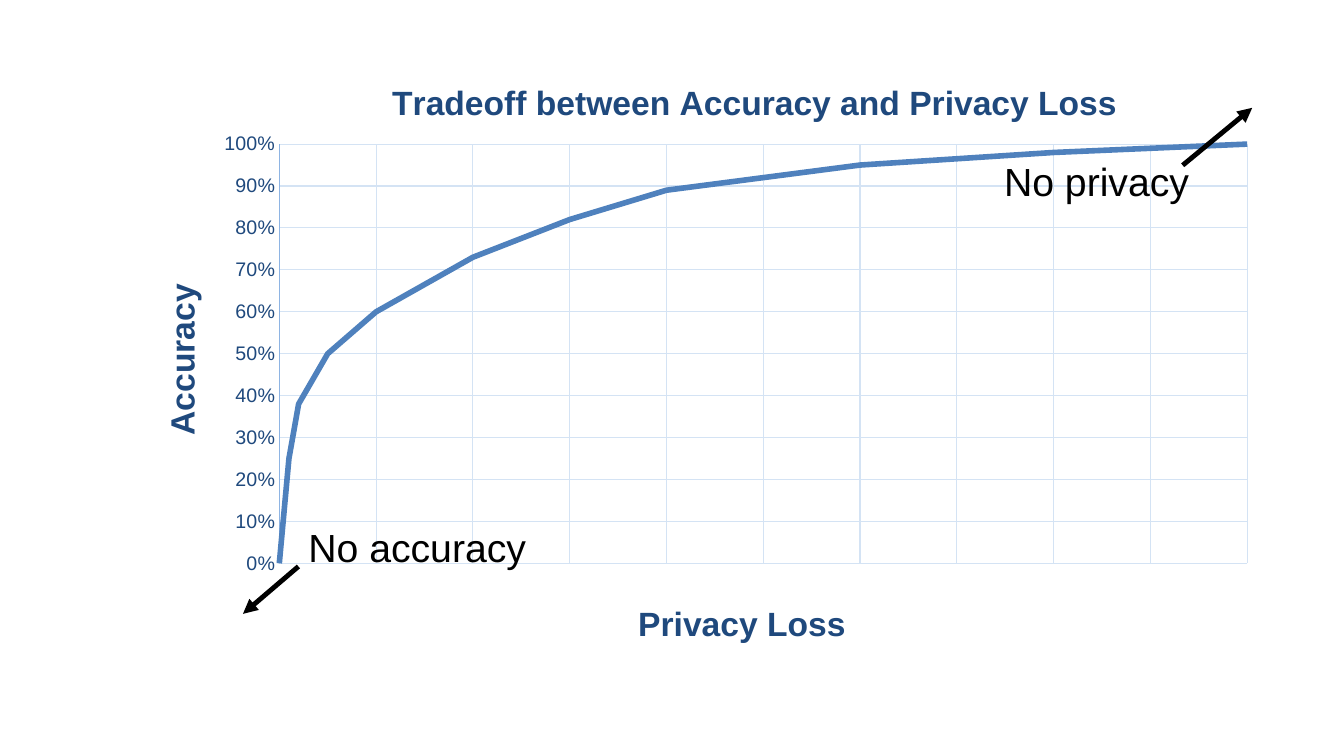
from pptx import Presentation
from pptx.chart.data import XyChartData
from pptx.dml.color import RGBColor
from pptx.enum.chart import XL_CHART_TYPE as ChartType, XL_TICK_MARK as Tick
from pptx.enum.shapes import MSO_CONNECTOR as Connector
from pptx.oxml import parse_xml
from pptx.oxml.ns import nsdecls, qn
from pptx.util import Inches, Pt

THEME = {
    "font": "Arial", "navy": "1F497D", "curve": "4F81BD", "grid": "D4E3F4",
    "axis": "8EB4E3", "ink": "000000",
    "title": 24, "tick": 14, "label": 28,
    "curve_width": 4, "grid_width": 0.75, "arrow_width": 3.5,
}

TITLE = ("Tradeoff between Accuracy and Privacy Loss", (3.83, 0.74))
X_TITLE = ("Privacy Loss", (6.27, 5.91))
Y_TITLE = ("Accuracy", (1.53, 2.76))
POINTS = [(0, 0), (0.1, 0.25), (0.2, 0.38), (0.5, 0.5), (1, 0.6), (2, 0.73),
          (3, 0.82), (4, 0.89), (6, 0.95), (8, 0.98), (10, 1)]
CHART_BOX = (1.25, 0.45, 11.36, 6.12)
PLOT_BOX = (2.77, 1.43, 9.6, 4.16)
LABELS = [("No privacy", (9.86, 1.51, 2.38, 0.57)),
          ("No accuracy", (2.96, 5.14, 2.38, 0.57))]
ARROWS = [(2.96, 5.62, 2.41, 6.09), (11.73, 1.64, 12.42, 1.07)]


def style_font(font, size, color, bold=False):
    font.name = THEME["font"]
    font.size = Pt(size)
    font.bold = bold
    font.color.rgb = RGBColor.from_string(color)


def style_line(line, color, width):
    line.color.rgb = RGBColor.from_string(color)
    line.width = Pt(width)


def make_layout(box, inner=False):
    left, top, width, height = CHART_BOX
    parts = [("x", (box[0] - left) / width), ("y", (box[1] - top) / height)]
    modes = '<c:xMode val="edge"/><c:yMode val="edge"/>'
    if inner:
        parts += [("w", box[2] / width), ("h", box[3] / height)]
        modes = '<c:layoutTarget val="inner"/>' + modes
    values = "".join(f'<c:{name} val="{value:.4f}"/>' for name, value in parts)
    return parse_xml(f'<c:layout {nsdecls("c")}><c:manualLayout>{modes}{values}'
                     '</c:manualLayout></c:layout>')


def drop_layout(parent):
    for old in parent.findall(qn("c:layout")):
        parent.remove(old)


def set_title(title, content):
    text, place = content
    tf = title.text_frame
    tf.text = text
    style_font(tf.paragraphs[0].runs[0].font, THEME["title"], THEME["navy"], True)
    element = title._element
    drop_layout(element)
    element.find(qn("c:tx")).addnext(make_layout(place))
    return tf


def set_axis(axis, maximum, unit):
    axis.minimum_scale, axis.maximum_scale, axis.major_unit = 0, maximum, unit
    axis.has_major_gridlines = True
    style_line(axis.major_gridlines.format.line, THEME["grid"], THEME["grid_width"])
    axis.major_tick_mark = axis.minor_tick_mark = Tick.NONE


def add_tradeoff_chart(slide):
    data = XyChartData()
    points = data.add_series("Series 1")
    for x, y in POINTS:
        points.add_data_point(x, y)
    chart = slide.shapes.add_chart(ChartType.XY_SCATTER_SMOOTH_NO_MARKERS,
                                   *map(Inches, CHART_BOX), data).chart
    chart.has_legend = False
    style_font(chart.font, THEME["tick"], THEME["navy"])
    chart.plots[0].vary_by_categories = False
    series = chart.plots[0].series[0]
    series.smooth = True
    style_line(series.format.line, THEME["curve"], THEME["curve_width"])

    x_axis, y_axis = chart.category_axis, chart.value_axis
    set_axis(x_axis, 10, 1)
    set_axis(y_axis, 1, 0.1)
    x_axis.visible = False
    labels = y_axis.tick_labels
    labels.number_format, labels.number_format_is_linked = "0%", False
    style_font(labels.font, THEME["tick"], THEME["navy"])
    style_line(y_axis.format.line, THEME["axis"], THEME["grid_width"])

    set_title(chart.chart_title, TITLE)
    set_title(x_axis.axis_title, X_TITLE)
    body = set_title(y_axis.axis_title, Y_TITLE)._txBody.find(qn("a:bodyPr"))
    body.set("rot", "-5400000")
    body.set("vert", "horz")
    plot_area = chart._chartSpace.find(".//" + qn("c:plotArea"))
    drop_layout(plot_area)
    plot_area.insert(0, make_layout(PLOT_BOX, inner=True))


def add_label(slide, text, box):
    tf = slide.shapes.add_textbox(*map(Inches, box)).text_frame
    tf.word_wrap = True
    tf.text = text
    style_font(tf.paragraphs[0].runs[0].font, THEME["label"], THEME["ink"])


def add_arrow(slide, ends):
    sp = slide.shapes.add_connector(Connector.STRAIGHT, *map(Inches, ends))
    style_line(sp.line, THEME["ink"], THEME["arrow_width"])
    properties = sp._element.spPr
    properties.find(qn("a:ln")).append(
        parse_xml(f'<a:tailEnd {nsdecls("a")} type="triangle"/>'))
    properties.append(parse_xml(f'<a:effectLst {nsdecls("a")}/>'))


def main():
    prs = Presentation()
    prs.slide_width, prs.slide_height = Inches(13.33), Inches(7.5)
    slide = prs.slides.add_slide(prs.slide_layouts[6])
    add_tradeoff_chart(slide)
    for text, box in LABELS:
        add_label(slide, text, box)
    for ends in ARROWS:
        add_arrow(slide, ends)
    prs.save("out.pptx")


if __name__ == "__main__":
    main()
